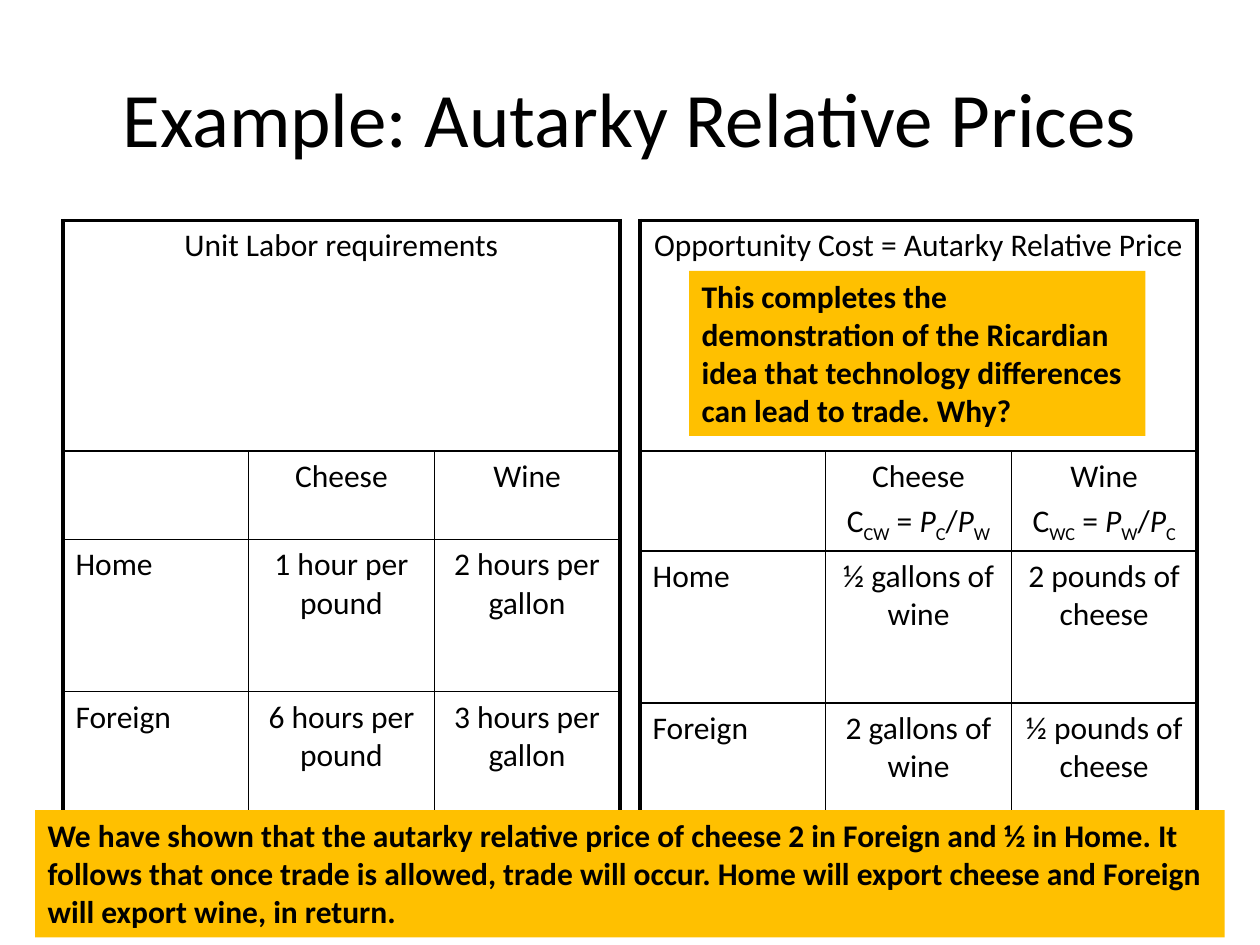
from dataclasses import dataclass

from lxml import etree
from pptx import Presentation
from pptx.dml.color import RGBColor
from pptx.enum.shapes import MSO_SHAPE
from pptx.enum.text import MSO_ANCHOR, PP_ALIGN
from pptx.oxml.ns import qn
from pptx.util import Inches, Pt

RECTANGLE = MSO_SHAPE.RECTANGLE
TOP, MIDDLE = MSO_ANCHOR.TOP, MSO_ANCHOR.MIDDLE
LEFT, CENTER = PP_ALIGN.LEFT, PP_ALIGN.CENTER
BLANK_LAYOUT = 6


@dataclass(frozen=True)
class Theme:
    font: str = "Calibri"
    ink: str = "000000"
    callout: str = "FFC000"
    title_size: float = 44
    body_size: float = 18
    paragraph_gap: float = 3.6
    outer_line: float = 2.25
    inner_line: float = 1


THEME = Theme()


def ratio(good, other):
    """Opportunity cost formula as (text, style) runs."""
    return [("C", ""), (good + other, "sub"), (" = ", ""), ("P", "italic"), (good, "sub"),
            ("/", ""), ("P", "italic"), (other, "sub")]


LABOR_ROWS = [
    ["Unit Labor requirements", "", ""],
    ["", "Cheese", "Wine"],
    ["Home", "1 hour per pound", "2 hours per gallon"],
    ["Foreign", "6 hours per pound", "3 hours per gallon"],
]
PRICE_ROWS = [
    ["Opportunity Cost = Autarky Relative Price", "", ""],
    ["", ["Cheese", ratio("C", "W")], ["Wine", ratio("W", "C")]],
    ["Home", "½ gallons of wine", "2 pounds of cheese"],
    ["Foreign", "2 gallons of wine", "½ pounds of cheese"],
]


def add_run(paragraph, text, size, bold=False, style=""):
    run = paragraph.add_run()
    run.text = text
    run.font.name = THEME.font
    run.font.size = Pt(size)
    run.font.bold = bold
    run.font.color.rgb = RGBColor.from_string(THEME.ink)
    if style == "italic":
        run.font.italic = True
    elif style == "sub":
        run.font._element.set("baseline", "-25000")


def write(text_frame, content, size, align=LEFT, bold=False):
    """Content is a string or a list of paragraphs, each a string or a list of runs."""
    lines = content if isinstance(content, list) else [content]
    for index, line in enumerate(lines):
        paragraph = text_frame.add_paragraph() if index else text_frame.paragraphs[0]
        paragraph.alignment = align
        if index:
            paragraph.space_before = Pt(THEME.paragraph_gap)
        for text, style in [(line, "")] if isinstance(line, str) else line:
            add_run(paragraph, text, size, bold, style)


def add_title(slide, text):
    shape = slide.shapes.add_textbox(Inches(0.5), Inches(0.3), Inches(9), Inches(1.25))
    shape.text_frame.word_wrap = True
    shape.text_frame.vertical_anchor = MIDDLE
    write(shape.text_frame, text, THEME.title_size, CENTER)


def set_borders(cell, outer_sides):
    properties = cell._tc.get_or_add_tcPr()
    for side in "LRTB":
        width = THEME.outer_line if side in outer_sides else THEME.inner_line
        line = etree.SubElement(properties, qn(f"a:ln{side}"), w=str(Pt(width)))
        fill = etree.SubElement(line, qn("a:solidFill"))
        etree.SubElement(fill, qn("a:srgbClr"), val=THEME.ink)


def add_grid(slide, left, rows, heights):
    row_count, column_count = len(rows), len(rows[0])
    frame = slide.shapes.add_table(row_count, column_count, Inches(left), Inches(1.75),
                                   Inches(4.42), Inches(sum(heights)))
    table = frame.table
    table.first_row = table.horz_banding = False
    for row, height in zip(table.rows, heights):
        row.height = Inches(height)

    # The heading spans the whole first row
    table.cell(0, 0).merge(table.cell(0, column_count - 1))

    for r, values in enumerate(rows):
        for c, value in enumerate(values):
            cell = table.cell(r, c)
            outer = {"L": c == 0, "R": c == column_count - 1 or cell.is_merge_origin,
                     "T": r == 0, "B": r == row_count - 1}
            set_borders(cell, [side for side, is_outer in outer.items() if is_outer])
            cell.fill.background()
            if value:
                align = LEFT if c == 0 and r > 0 else CENTER
                write(cell.text_frame, value, THEME.body_size, align)


def add_callout(slide, left, top, width, height, text):
    shape = slide.shapes.add_shape(RECTANGLE, Inches(left), Inches(top),
                                   Inches(width), Inches(height))
    shape.shadow.inherit = False
    shape.fill.solid()
    shape.fill.fore_color.rgb = RGBColor.from_string(THEME.callout)
    shape.line.fill.background()
    shape.text_frame.word_wrap = True
    shape.text_frame.vertical_anchor = TOP
    write(shape.text_frame, text, THEME.body_size, bold=True)


def main():
    presentation = Presentation()
    presentation.slide_width, presentation.slide_height = Inches(10), Inches(7.5)
    slide = presentation.slides.add_slide(presentation.slide_layouts[BLANK_LAYOUT])

    add_title(slide, "Example: Autarky Relative Prices")

    # Labor requirements beside the prices they imply
    add_grid(slide, 0.5, LABOR_ROWS, [1.83, 0.7, 1.21, 1.21])
    add_grid(slide, 5.08, PRICE_ROWS, [1.83, 0.76, 1.21, 1.21])

    # Conclusions over the tables
    add_callout(slide, 5.47, 2.15, 3.62, 1.31,
                "This completes the demonstration of the Ricardian idea that technology "
                "differences can lead to trade. Why?")
    add_callout(slide, 0.28, 6.43, 9.44, 1.01,
                "We have shown that the autarky relative price of cheese 2 in Foreign and ½ "
                "in Home. It follows that once trade is allowed, trade will occur. Home will "
                "export cheese and Foreign will export wine, in return.")

    presentation.save("out.pptx")


if __name__ == "__main__":
    main()
